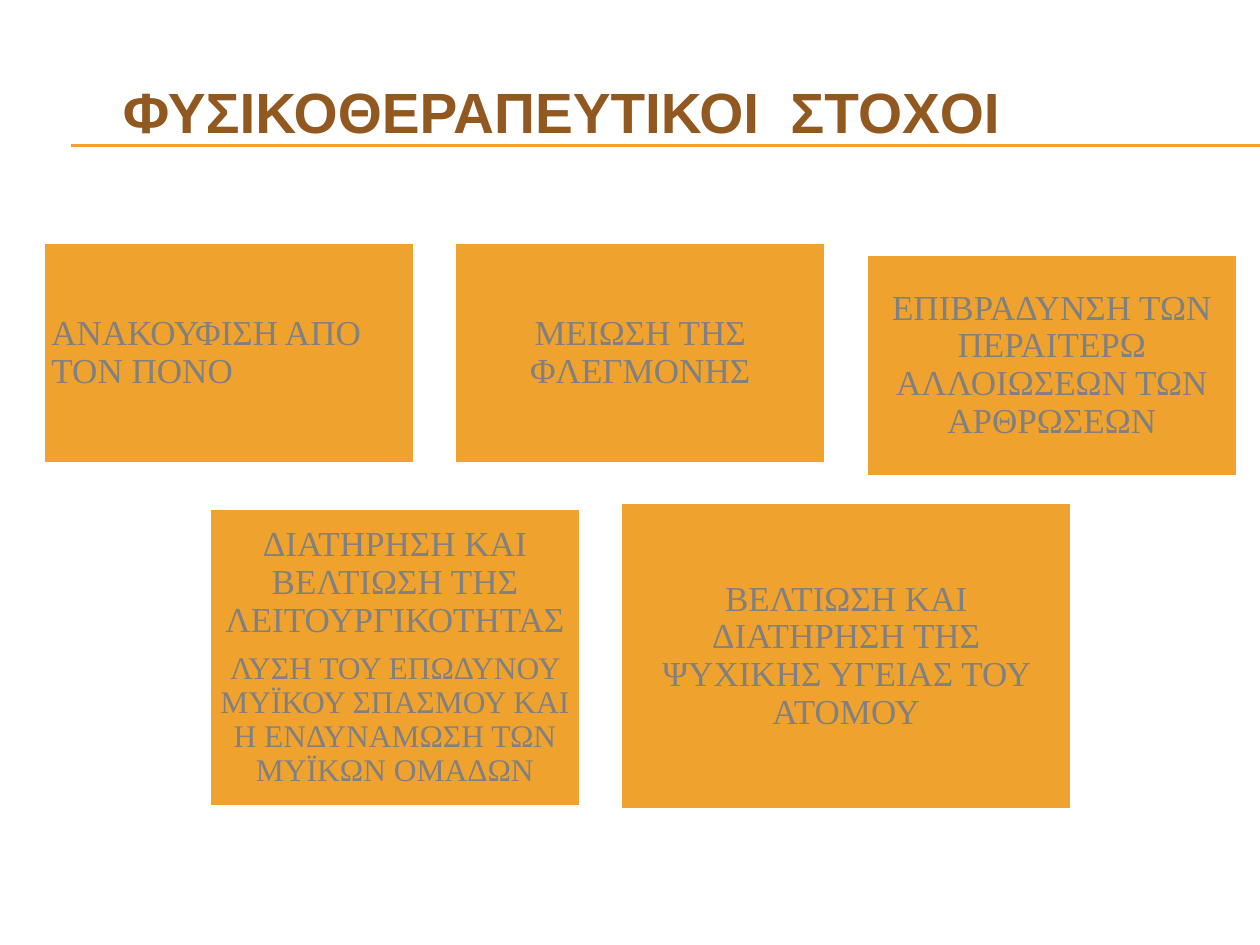
from lxml.etree import SubElement
from pptx import Presentation
from pptx.dml.color import RGBColor
from pptx.enum.shapes import MSO_CONNECTOR, MSO_SHAPE
from pptx.enum.text import MSO_ANCHOR, PP_ALIGN
from pptx.oxml.ns import qn
from pptx.util import Pt

GOLD = RGBColor(0xF0, 0xA2, 0x2E)
BROWN = RGBColor(0x91, 0x58, 0x1F)
GREY = RGBColor(0x80, 0x80, 0x80)
WHITE = RGBColor(0xFF, 0xFF, 0xFF)

TITLE = "ΦΥΣΙΚΟΘΕΡΑΠΕΥΤΙΚΟΙ  ΣΤΟΧΟΙ"
RULES = [82.8, 83.5]
WIDE, GAP = 213.8, 21.4
LEFT, MID = PP_ALIGN.LEFT, PP_ALIGN.CENTER
ROWS = [
    (23.8, [
        (137.5, WIDE, 128.2, LEFT, [("ΑΝΑΚΟΥΦΙΣΗ ΑΠΟ ΤΟΝ ΠΟΝΟ", 20)]),
        (137.5, WIDE, 128.2, MID, [("ΜΕΙΩΣΗ ΤΗΣ ΦΛΕΓΜΟΝΗΣ", 20)]),
        (144.7, WIDE, 128.2, MID,
         [("ΕΠΙΒΡΑΔΥΝΣΗ ΤΩΝ ΠΕΡΑΙΤΕΡΩ ΑΛΛΟΙΩΣΕΩΝ ΤΩΝ ΑΡΘΡΩΣΕΩΝ", 20)]),
    ]),
    (118.8, [
        (289.5, WIDE, 172, MID,
         [("ΔΙΑΤΗΡΗΣΗ ΚΑΙ ΒΕΛΤΙΩΣΗ ΤΗΣ ΛΕΙΤΟΥΡΓΙΚΟΤΗΤΑΣ", 20),
          ("ΛΥΣΗ ΤΟΥ ΕΠΩΔΥΝΟΥ ΜΥΪΚΟΥ ΣΠΑΣΜΟΥ ΚΑΙ Η ΕΝΔΥΝΑΜΩΣΗ ΤΩΝ ΜΥΪΚΩΝ ΟΜΑΔΩΝ", 18)]),
        (286.6, 259.2, 177.1, MID,
         [("ΒΕΛΤΙΩΣΗ ΚΑΙ ΔΙΑΤΗΡΗΣΗ ΤΗΣ ΨΥΧΙΚΗΣ ΥΓΕΙΑΣ ΤΟΥ ΑΤΟΜΟΥ", 20)]),
    ]),
]


def style(para, face, size, tint, bold=False):
    for run in para.runs:
        font = run.font
        font.name, font.size, font.bold = face, Pt(size), bold
        font.color.rgb = tint


def add_rule(slide, y):
    rule = slide.shapes.add_connector(
        MSO_CONNECTOR.STRAIGHT, Pt(40.4), Pt(y), Pt(720), Pt(y))
    rule.line.color.rgb = GOLD
    rule.line.width = Pt(0.75)
    SubElement(rule._element.spPr, qn("a:effectLst"))


def add_title(slide):
    frame = slide.shapes.add_textbox(Pt(36), Pt(25.2), Pt(570), Pt(76.3)).text_frame
    frame.word_wrap = True
    frame.vertical_anchor = MSO_ANCHOR.MIDDLE
    frame.text = TITLE
    para = frame.paragraphs[0]
    para.alignment = MID
    style(para, "Arial", 32.4, BROWN, True)


def add_goal(slide, x, y, wide, high, align, lines):
    box = slide.shapes.add_shape(MSO_SHAPE.RECTANGLE, Pt(x), Pt(y), Pt(wide), Pt(high))
    box.shadow.inherit = False
    box.fill.solid()
    box.fill.fore_color.rgb = GOLD
    box.line.color.rgb = WHITE
    box.line.width = Pt(3.35)
    frame = box.text_frame
    frame.word_wrap = True
    frame.vertical_anchor = MSO_ANCHOR.MIDDLE
    frame.margin_left = frame.margin_right = Pt(5.6)
    frame.margin_top = frame.margin_bottom = Pt(5.6)
    frame.text = "\n".join(text for text, size in lines)
    for para, (text, size) in zip(frame.paragraphs, lines):
        para.alignment = align
        para.line_spacing = 0.9
        para.space_after = Pt(size * 0.35)
        style(para, "Times New Roman", size, GREY)


def main():
    deck = Presentation()
    deck.slide_width, deck.slide_height = Pt(720), Pt(540)
    slide = deck.slides.add_slide(deck.slide_layouts[6])
    for y in RULES:
        add_rule(slide, y)
    add_title(slide)
    for x, goals in ROWS:
        for y, wide, high, align, lines in goals:
            add_goal(slide, x, y, wide, high, align, lines)
            x += wide + GAP
    deck.save("out.pptx")


if __name__ == "__main__":
    main()
